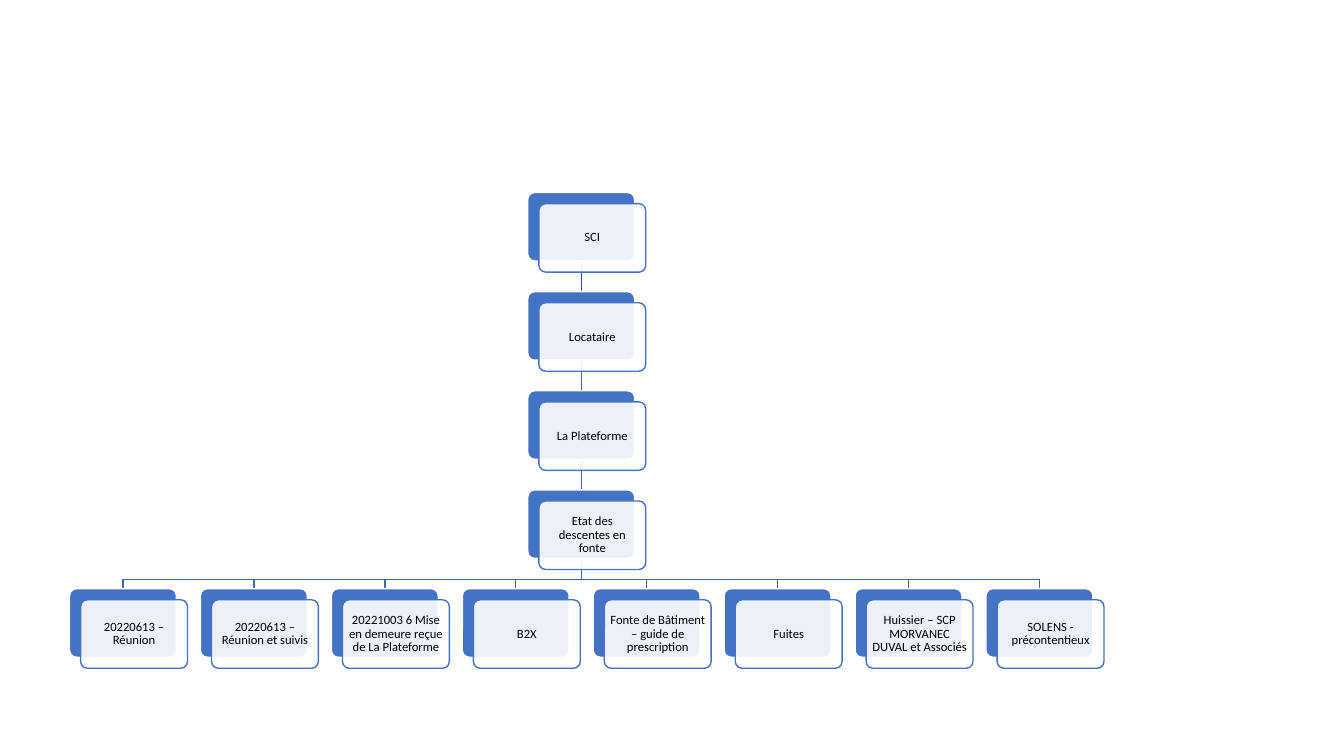
from dataclasses import dataclass

from lxml.etree import SubElement
from pptx import Presentation
from pptx.dml.color import RGBColor
from pptx.enum.shapes import MSO_CONNECTOR, MSO_SHAPE
from pptx.enum.text import MSO_ANCHOR, PP_ALIGN
from pptx.oxml.ns import qn
from pptx.util import Inches, Pt


@dataclass(frozen=True)
class Theme:
    """Colours, font and sizes of the chart."""

    accent: RGBColor = RGBColor(0x44, 0x72, 0xC4)
    link: RGBColor = RGBColor(0x3E, 0x67, 0xB2)
    top_link: RGBColor = RGBColor(0x36, 0x5B, 0x9D)
    paper: RGBColor = RGBColor(0xFF, 0xFF, 0xFF)
    ink: RGBColor = RGBColor(0, 0, 0)
    font: str = "Calibri"
    label_size: float = 9
    line_width: float = 1


THEME = Theme()
LEVELS = ["SCI", "Locataire", "La Plateforme", "Etat des descentes en fonte"]
DOCUMENTS = [
    "20220613 – Réunion",
    "20220613 – Réunion et suivis",
    "20221003 6 Mise en demeure reçue de La Plateforme",
    "B2X",
    "Fonte de Bâtiment – guide de prescription",
    "Fuites",
    "Huissier – SCP MORVANEC DUVAL et Associés",
    "SOLENS - précontentieux",
]
CARD_WIDTH, CARD_HEIGHT = 1.06, 0.68
OFFSET = 0.11
FIRST_LEFT, LAST_LEFT = 0.69, 9.78
FIRST_TOP, LAST_TOP = 1.91, 4.86
DOCUMENT_TOP = 5.84
RAIL_TOP = 5.75


def write_text(shape, text, size=THEME.label_size, color=THEME.ink,
               align=PP_ALIGN.CENTER, inset=0.04):
    """Fill a shape with one formatted paragraph."""
    frame = shape.text_frame
    frame.word_wrap = True
    frame.vertical_anchor = MSO_ANCHOR.MIDDLE
    frame.margin_left = frame.margin_right = Inches(inset)
    frame.margin_top = frame.margin_bottom = Inches(inset)
    paragraph = frame.paragraphs[0]
    paragraph.alignment = align
    paragraph.line_spacing = 0.9
    run = paragraph.add_run()
    run.text = text
    run.font.name = THEME.font
    run.font.size = Pt(size)
    run.font.color.rgb = color


def add_panel(slide, left, top, fill, outline, opacity=100):
    """Draw one rounded panel."""
    panel = slide.shapes.add_shape(
        MSO_SHAPE.ROUNDED_RECTANGLE, Inches(left), Inches(top),
        Inches(CARD_WIDTH), Inches(CARD_HEIGHT))
    panel.adjustments[0] = 0.1
    panel.shadow.inherit = False
    panel.fill.solid()
    panel.fill.fore_color.rgb = fill
    panel.line.color.rgb = outline
    panel.line.width = Pt(THEME.line_width)
    if opacity < 100:
        color = panel.element.spPr.find(qn("a:solidFill"))[0]
        SubElement(color, qn("a:alpha"), val=str(opacity * 1000))
    return panel


def add_card(slide, left, top, label):
    """Draw a labelled card over its backing and return the backing."""
    backing = add_panel(slide, left, top, THEME.accent, THEME.paper)
    front = add_panel(slide, left + OFFSET, top + OFFSET,
                      THEME.paper, THEME.accent, opacity=90)
    write_text(front, label)
    return backing


def style_link(slide, link, color):
    """Set the line of a link and send it behind the cards."""
    link.line.color.rgb = color
    link.line.width = Pt(THEME.line_width)
    slide.shapes.element.insert(2, link.element)


def join_levels(slide, upper, lower, color):
    """Connect two stacked cards."""
    link = slide.shapes.add_connector(MSO_CONNECTOR.STRAIGHT, 0, 0, 0, 0)
    link.begin_connect(upper, 2)
    link.end_connect(lower, 0)
    SubElement(link.element.spPr, qn("a:effectLst"))
    style_link(slide, link, color)


def add_branch(slide, parent, document):
    """Draw the angled link from the parent card to a document card."""
    start = parent.left + parent.width // 2
    end = document.left + document.width // 2
    rail = Inches(RAIL_TOP)
    builder = slide.shapes.build_freeform(start, parent.top + parent.height)
    builder.add_line_segments(
        [(start, rail), (end, rail), (end, document.top)], close=False)
    branch = builder.convert_to_shape()
    branch.shadow.inherit = False
    branch.fill.background()
    style_link(slide, branch, THEME.link)


def main():
    """Build and save the organisation chart."""
    presentation = Presentation()
    presentation.slide_width = Inches(13.33)
    presentation.slide_height = Inches(7.5)
    slide = presentation.slides.add_slide(presentation.slide_layouts[6])

    level_step = (LAST_TOP - FIRST_TOP) / (len(LEVELS) - 1)
    document_step = (LAST_LEFT - FIRST_LEFT) / (len(DOCUMENTS) - 1)
    level_left = (FIRST_LEFT + LAST_LEFT) / 2
    levels = [add_card(slide, level_left, FIRST_TOP + row * level_step, label)
              for row, label in enumerate(LEVELS)]
    documents = [
        add_card(slide, FIRST_LEFT + column * document_step, DOCUMENT_TOP, label)
        for column, label in enumerate(DOCUMENTS)]

    link_colors = [THEME.top_link, THEME.link, THEME.link]
    for upper, lower, color in zip(levels, levels[1:], link_colors):
        join_levels(slide, upper, lower, color)
    for document in documents:
        add_branch(slide, levels[-1], document)

    presentation.save("out.pptx")


if __name__ == "__main__":
    main()
